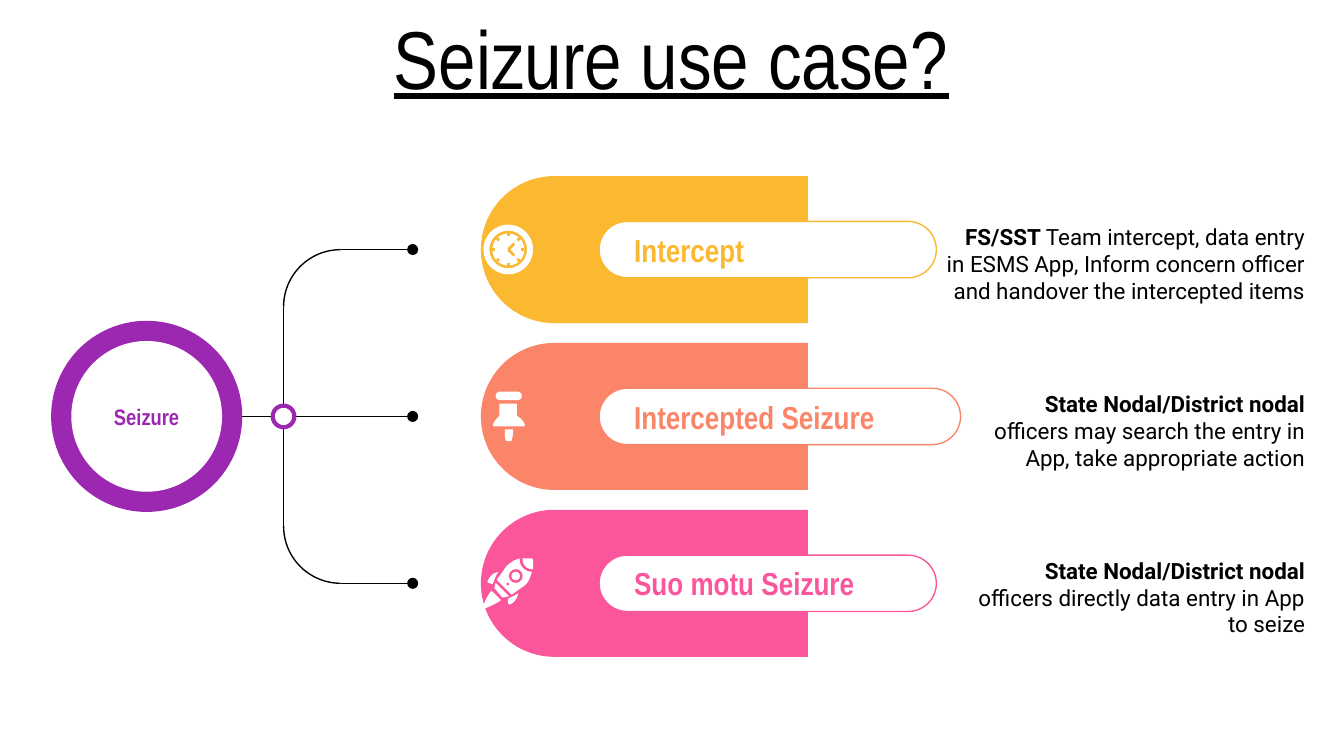
import math

from lxml import etree
from pptx import Presentation
from pptx.dml.color import RGBColor
from pptx.enum import shapes, text
from pptx.oxml.ns import qn
from pptx.util import Pt

COLORS = {"black": "000000", "white": "FFFFFF", "purple": "9C27B0",
          "amber": "FBB831", "coral": "FB8569", "pink": "FB569C"}
HEAD, BODY = "Arial Narrow", "Roboto"
SHAPE = shapes.MSO_SHAPE
LEFT, CENTER, RIGHT = (text.PP_ALIGN.LEFT, text.PP_ALIGN.CENTER,
                       text.PP_ALIGN.RIGHT)

ROW_PITCH = 89.4
ROWS = [
    ("amber", "Intercept", 180.7, 206.6, "FS/SST ",
     "Team intercept, data entry in ESMS App, Inform concern officer "
     "and handover the intercepted items"),
    ("coral", "Intercepted Seizure", 193.7, 193.7, "State Nodal/District nodal ",
     "officers may search the entry in App, take appropriate action"),
    ("pink", "Suo motu Seizure", 180.7, 193.7, "State Nodal/District nodal ",
     "officers directly data entry in App to seize"),
]

# Icon outlines in points: pairs are corners, sixes are Bezier curves
PIN = [
    [(8.6, 6.5), (8.6, 13), (7.2, 14.4, 5.8, 15.8, 5, 18), (5.8, 18.7),
     (21.6, 18.7), (22.3, 18), (21.6, 15.8, 20.2, 14.4, 18, 13), (18, 6.5)],
    [(11.5, 20.2), (11.5, 22.3), (11.5, 23.8, 11.5, 25.2, 12.2, 26.6),
     (15, 26.6), (15.3, 25.2, 15.8, 23.8, 15.8, 22.3), (15.8, 20.2)],
]
ROCKET = [
    # Hull, nose, band
    [(19.4, 0), (16.6, 0.7, 14.4, 2.2, 12.2, 4.3),
     (10.8, 6.5, 8.6, 9.4, 7.2, 11.5), (15.1, 19.4),
     (17.3, 18, 20.2, 15.8, 22.3, 14.4), (24.5, 12.2, 25.2, 10.1, 25.9, 7.2),
     (22.3, 7.2, 19.4, 4.3, 19.4, 0.7)],
    [(25.2, 0), (20.9, 0), (20.9, 3.6, 23, 5.8, 26.6, 5.8), (26.6, 0.7),
     (25.9, 0)],
    [(6.5, 13), (5.8, 15.8), (10.1, 20.9), (13.7, 20.2)],
    # Fins, flame
    [(18.7, 18.7), (13, 21.6), (13, 23.8), (13.7, 24.5), (14.4, 24.5),
     (14.4, 24.5, 18, 23, 18.7, 18.7)],
    [(7.9, 7.2), (3.6, 7.9, 2.2, 12.2, 2.2, 12.2), (2.2, 13), (5, 13.7),
     (5.8, 11.5, 6.5, 9.4, 7.9, 7.2)],
    [(4.3, 17.3), (2.9, 18.7, 0.7, 23, 0, 25.2), (0.7, 26.6), (1.4, 26.6),
     (2.9, 25.9, 7.9, 23.8, 9.4, 22.3)],
]


def rgb(name):
    return RGBColor.from_string(COLORS[name])


def paint(sp, fill=None, line=None, weight=0.75):
    sp.shadow.inherit = False
    if fill:
        sp.fill.solid()
        sp.fill.fore_color.rgb = rgb(fill)
    else:
        sp.fill.background()
    if line:
        sp.line.color.rgb = rgb(line)
        sp.line.width = Pt(weight)
    else:
        sp.line.fill.background()
    return sp


def add_shape(s, kind, x, y, w, h, fill=None, line=None, weight=0.75):
    sp = s.shapes.add_shape(kind, Pt(x), Pt(y), Pt(w), Pt(h))
    return paint(sp, fill, line, weight)


def add_circle(s, cx, cy, radius, fill, line=None, weight=0.75):
    return add_shape(s, SHAPE.OVAL, cx - radius, cy - radius,
                     2 * radius, 2 * radius, fill, line, weight)


def add_line(s, x1, y1, x2, y2, color="black", weight=0.75, dot=False):
    cn = s.shapes.add_connector(shapes.MSO_CONNECTOR.STRAIGHT,
                                Pt(x1), Pt(y1), Pt(x2), Pt(y2))
    cn.line.color.rgb = rgb(color)
    cn.line.width = Pt(weight)
    if dot:
        etree.SubElement(cn.line._get_or_add_ln(), qn("a:tailEnd"), type="oval")
    etree.SubElement(cn._element.spPr, qn("a:effectLst"))


def add_outline(s, x, y, steps, fill):
    points = [steps[0]]
    for step in steps[1:]:
        if len(step) == 2:
            points.append(step)
            continue
        ctrl = [points[-1], step[:2], step[2:4], step[4:]]
        for t in (0.2, 0.4, 0.6, 0.8, 1):
            weights = [math.comb(3, k) * t**k * (1 - t)**(3 - k) for k in range(4)]
            points.append(tuple(sum(w * c[axis] for w, c in zip(weights, ctrl))
                                for axis in (0, 1)))
    corners = [(Pt(px), Pt(py)) for px, py in points]
    fb = s.shapes.build_freeform(*corners[0], scale=1.0)
    fb.add_line_segments(corners[1:], close=True)
    paint(fb.convert_to_shape(Pt(x), Pt(y)), fill)


def set_text(sp, runs, size, font, color, align, bold=None, underline=None,
             anchor=text.MSO_ANCHOR.MIDDLE, left=7.2):
    tf = sp.text_frame
    tf.word_wrap = True
    tf.vertical_anchor = anchor
    tf.margin_left = Pt(left)
    tf.margin_right = tf.margin_top = tf.margin_bottom = Pt(7.2)
    p = tf.paragraphs[0]
    p.alignment = align
    p.font.size, p.font.name, p.font.color.rgb = Pt(size), font, rgb(color)
    p.font.bold, p.font.underline = bold, underline
    for words, run_bold in runs:
        r = p.add_run()
        r.text = words
        r.font.bold = run_bold


def draw_clock(s, x, y, color):
    ring = add_shape(s, SHAPE.DONUT, x, y, 26.6, 26.6, "white")
    ring.adjustments[0] = 0.12
    cx, cy = x + 13.3, y + 13.3
    add_circle(s, cx, cy, 8.6, "white")
    for k in range(8):
        dx, dy = math.cos(k * math.pi / 4), math.sin(k * math.pi / 4)
        add_line(s, cx + 7 * dx, cy + 7 * dy, cx + 8.6 * dx, cy + 8.6 * dy,
                 color, 1.5)
    for dy in (-3.2, 3.2):
        add_line(s, cx, cy, cx + 3.2, cy + dy, color, 1.5)


def draw_pin(s, x, y, color):
    cap = add_shape(s, SHAPE.ROUNDED_RECTANGLE, x + 6.5, y, 14.1, 4.6, "white")
    cap.adjustments[0] = 0.5
    for steps in PIN:
        add_outline(s, x, y, steps, "white")


def draw_rocket(s, x, y, color):
    for steps in ROCKET:
        add_outline(s, x, y, steps, "white")
    for dx, dy, radius, fill in ((17.3, 9.4, 3.7, color), (17.3, 9.4, 2.3, "white"),
                                 (13, 13.7, 0.7, color)):
        add_circle(s, x + dx, y + dy, radius, fill)


def draw_title(s, x, y, w, h):
    box = s.shapes.add_textbox(Pt(x), Pt(y), Pt(w), Pt(h))
    set_text(box, [("Seizure use case?", None)], 44, HEAD, "black", CENTER,
             underline=True)


def draw_row(s, x, y, w, h, row, draw_icon):
    color, label, pill_w, note_w, lead, rest = row
    # Bar, turned so that its round end faces left
    bar_w = 175.2
    bar = add_shape(s, SHAPE.ROUND_2_SAME_RECTANGLE, x + (bar_w - h) / 2,
                    y + (h - bar_w) / 2, h, bar_w, color)
    bar.adjustments[0], bar.adjustments[1] = 0.5, 0
    bar.rotation = 270
    # Label
    pill = add_shape(s, SHAPE.ROUNDED_RECTANGLE, x + 63.3, y + (h - 30.2) / 2,
                     pill_w, 30.2, "white", color)
    pill.adjustments[0] = 0.5
    set_text(pill, [(label, None)], 17, HEAD, color, LEFT, bold=True, left=14.4)
    # Note
    note = s.shapes.add_textbox(Pt(x + w - note_w), Pt(y + 18), Pt(note_w), Pt(41.8))
    set_text(note, [(lead, True), (rest, False)], 12, BODY, "black", RIGHT,
             anchor=text.MSO_ANCHOR.TOP)
    draw_icon(s, x + 1.4, y + (h - 26.6) / 2, color)


def draw_hub(s, x, cy):
    trunk, end, arc = x + 124.5, x + 193.7, 61.2
    # Branches: the upper arc is turned to the top left, the lower to the bottom left
    for side, turn in ((-1, 270), (1, 180)):
        tip = cy + side * ROW_PITCH
        top = tip if side < 0 else tip - arc
        add_shape(s, SHAPE.ARC, trunk, top, arc, arc, line="black").rotation = turn
        add_line(s, trunk + arc / 2, tip, end, tip, dot=True)
        add_line(s, trunk, tip - side * arc / 2, trunk, cy)
    add_line(s, x + 70.6, cy, end, cy, dot=True)
    add_circle(s, trunk, cy, 5.8, "white", "purple", 2.25)
    # Ring
    add_circle(s, x + 51.2, cy, 51.2, "purple")
    disc = add_circle(s, x + 51.2, cy, 40.4, "white")
    set_text(disc, [("Seizure", None)], 12, HEAD, "purple", CENTER, bold=True)


def main():
    prs = Presentation()
    prs.slide_width, prs.slide_height = Pt(720), Pt(405)
    s = prs.slides.add_slide(prs.slide_layouts[6])
    draw_title(s, 55.4, 11.5, 608.4, 38.2)
    icons = (draw_clock, draw_pin, draw_rocket)
    for i, (row, draw_icon) in enumerate(zip(ROWS, icons)):
        draw_row(s, 257.6, 94.3 + i * ROW_PITCH, 448.7, 78.8, row, draw_icon)
    draw_hub(s, 27.4, 223.1)
    prs.save("out.pptx")


if __name__ == "__main__":
    main()
